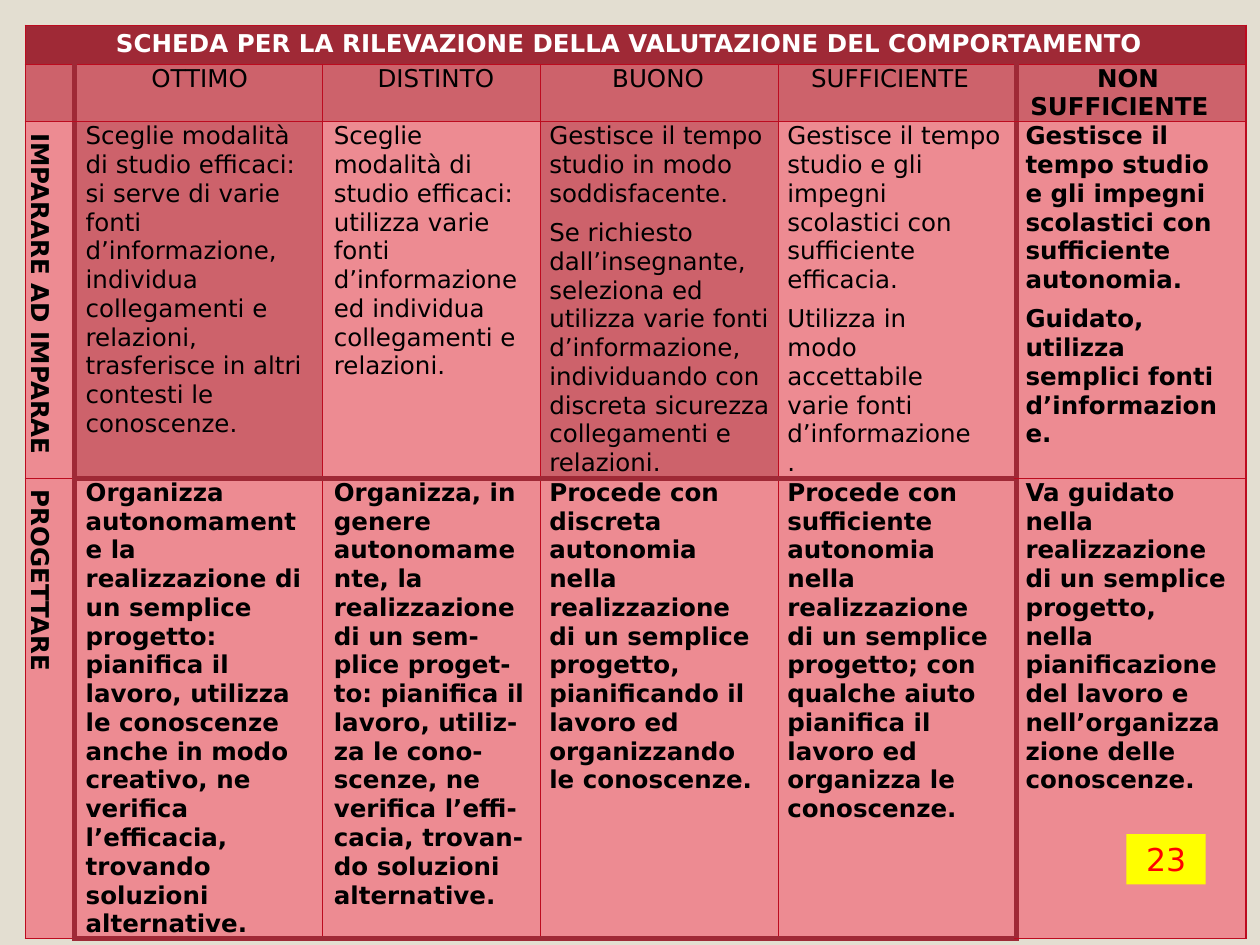
import pptx
import pptx.util
import pptx.dml.color
import pptx.enum.shapes
import pptx.enum.text
import pptx.oxml
import pptx.oxml.ns
from pptx.util import Inches

FONT = "DejaVu Sans"
COLORS = {
    "back": "E3DED1", "wine": "9F2936", "rule": "BC0B1F",
    "dark": "CD626B", "light": "ED8B92", "badge": "FFFF00",
    "red": "FF0000", "black": "000000", "white": "FFFFFF",
}
THIN, THICK = ("rule", 0.75), ("wine", 3.35)

COLS = [0.39, 1.97, 1.73, 1.89, 1.89, 1.82]
ROWS = [0.31, 0.45, 2.83, 3.65]
TITLE = "SCHEDA PER LA RILEVAZIONE DELLA VALUTAZIONE DEL COMPORTAMENTO"
GRADES = ["", "OTTIMO", "DISTINTO", "BUONO ", "SUFFICIENTE", " NON SUFFICIENTE "]
HEAD_LEFT = [0, 0.02, 0.07, 0.04, 0.06, 0.06]
HEAD_RIGHT = [0, 0, 0, 0, 0.18, 0.18]
BODY_LEFT = [0.09, 0.09, 0.09, 0.07, 0.07, 0.07]
# Right indents of the paragraphs in each cell
LEARN_RIGHT = [[0], [0.13], [0.1], [0, 0], [0.1, 0.33], [0.16, 0.16]]
PLAN_RIGHT = [[0], [0.13], [0.1], [0.18], [0.17], [0.11]]
LEARN = [
    "IMPARARE AD IMPARAE",
    "Sceglie modalità di studio efficaci: si serve di varie fonti d’informazione, "
    "individua collegamenti e relazioni, trasferisce in altri contesti le conoscenze.",
    "Sceglie modalità di studio efficaci: utilizza varie fonti d’informazione "
    "ed individua collegamenti e relazioni.",
    "Gestisce il tempo studio in modo soddisfacente.\n"
    "Se richiesto dall’insegnante, seleziona ed utilizza varie fonti d’informazione, "
    "individuando con discreta sicurezza collegamenti e relazioni.",
    "Gestisce il tempo studio e gli impegni scolastici con sufficiente efficacia.\n"
    "Utilizza in modo accettabile varie fonti d’informazione.",
    "Gestisce il tempo studio e gli impegni scolastici con sufficiente autonomia.\n"
    "Guidato, utilizza semplici fonti d’informazione.",
]
PLAN = [
    "PROGETTARE",
    "Organizza autonomamente la realizzazione di un semplice progetto: pianifica il "
    "lavoro, utilizza le conoscenze anche in modo creativo, ne verifica l’efficacia, "
    "trovando soluzioni alternative.",
    "Organizza, in genere autonomamente, la realizzazione di un sem-plice proget-to: "
    "pianifica il lavoro, utiliz-za le cono-scenze, ne verifica l’effi-cacia, "
    "trovan-do soluzioni alternative.",
    "Procede con discreta autonomia nella realizzazione di un semplice progetto, "
    "pianificando il lavoro ed organizzando le conoscenze.",
    "Procede con sufficiente autonomia nella realizzazione di un semplice progetto; "
    "con qualche aiuto pianifica il lavoro ed organizza le conoscenze.",
    "Va guidato nella realizzazione di un semplice progetto, nella pianificazione "
    "del lavoro e nell’organizzazione delle conoscenze.",
]


def paint(fill, name):
    fill.solid()
    fill.fore_color.rgb = pptx.dml.color.RGBColor.from_string(COLORS[name])


def write(frame, text, size=14, color="black", bold=False, center=False,
          left=0, right=(0,), after=0, spacing=1.0):
    """Fill a text frame, one paragraph with its right indent for each line."""
    align = pptx.enum.text.PP_ALIGN
    for i, (line, inset) in enumerate(zip(text.split("\n"), right)):
        para = frame.add_paragraph() if i else frame.paragraphs[0]
        para.alignment = align.CENTER if center else align.LEFT
        para.space_after = pptx.util.Pt(after)
        para.line_spacing = spacing
        props = para._p.get_or_add_pPr()
        props.set("marL", str(Inches(left)))
        props.set("marR", str(Inches(inset)))
        props.set("indent", "0")
        run = para.add_run()
        run.text = line
        run.font.name = FONT
        run.font.size = pptx.util.Pt(size)
        run.font.bold = bold
        paint(run.font.fill, color)


def edge(cell, side, style):
    name, width = style
    cell._tc.get_or_add_tcPr().append(pptx.oxml.parse_xml(
        f'<a:ln{side} {pptx.oxml.ns.nsdecls("a")} w="{pptx.util.Pt(width)}">'
        f'<a:solidFill><a:srgbClr val="{COLORS[name]}"/></a:solidFill></a:ln{side}>'))


def frame_cell(cell, row, col):
    """Thick rules surround the four middle grades in both body rows."""
    def upright(x):
        return THICK if row and x in (1, 5) else THIN

    def level(y):
        return THICK if y in (3, 4) and 1 <= col <= 4 else THIN

    edge(cell, "L", upright(col))
    edge(cell, "R", upright(col + 1))
    edge(cell, "T", level(row))
    edge(cell, "B", level(row + 1))


def shade(row, col):
    if row == 0:
        return "wine"
    return "dark" if row == 1 or (row, col) in ((2, 1), (2, 3)) else "light"


def add_grid(slide):
    shape = slide.shapes.add_table(len(ROWS), len(COLS), Inches(0.2), Inches(0.2),
                                   Inches(sum(COLS)), Inches(sum(ROWS)))
    table = shape.table
    table.first_row = table.horz_banding = False
    for col, width in zip(table.columns, COLS):
        col.width = Inches(width)
    for row, height in zip(table.rows, ROWS):
        row.height = Inches(height)
    texts = [[TITLE] + [""] * 5, GRADES, LEARN, PLAN]
    for r, line in enumerate(texts):
        for c, text in enumerate(line):
            cell = table.cell(r, c)
            cell.margin_left = cell.margin_right = 0
            cell.margin_top = cell.margin_bottom = 0
            frame_cell(cell, r, c)
            paint(cell.fill, shade(r, c))
            if not text:
                continue
            if r == 0:
                write(cell.text_frame, text, color="white", bold=True,
                      center=True, left=0.1, right=[0.2], after=6, spacing=1.15)
            elif r == 1:
                write(cell.text_frame, text, bold=c == 5, center=True,
                      left=HEAD_LEFT[c], right=[HEAD_RIGHT[c]], after=6)
            else:
                right = LEARN_RIGHT if r == 2 else PLAN_RIGHT
                write(cell.text_frame, text, bold=r == 3 or c in (0, 5),
                      left=BODY_LEFT[c], right=right[c], after=6)
                if c == 0:
                    cell._tc.get_or_add_tcPr().set("vert", "vert")
    table.cell(0, 0).merge(table.cell(0, 5))


def add_badge(slide, text):
    shape = slide.shapes.add_shape(
        pptx.enum.shapes.MSO_SHAPE.RECTANGLE,
        Inches(8.94), Inches(6.62), Inches(0.63), Inches(0.4))
    shape.shadow.inherit = False
    paint(shape.fill, "badge")
    shape.line.fill.background()
    shape.text_frame.word_wrap = True
    shape.text_frame.vertical_anchor = pptx.enum.text.MSO_ANCHOR.MIDDLE
    write(shape.text_frame, text, size=18, color="red", center=True)


def main():
    deck = pptx.Presentation()
    deck.slide_width, deck.slide_height = Inches(10), Inches(7.5)
    slide = deck.slides.add_slide(deck.slide_layouts[6])
    paint(slide.background.fill, "back")
    add_grid(slide)
    add_badge(slide, "23")
    deck.save("out.pptx")


if __name__ == "__main__":
    main()
